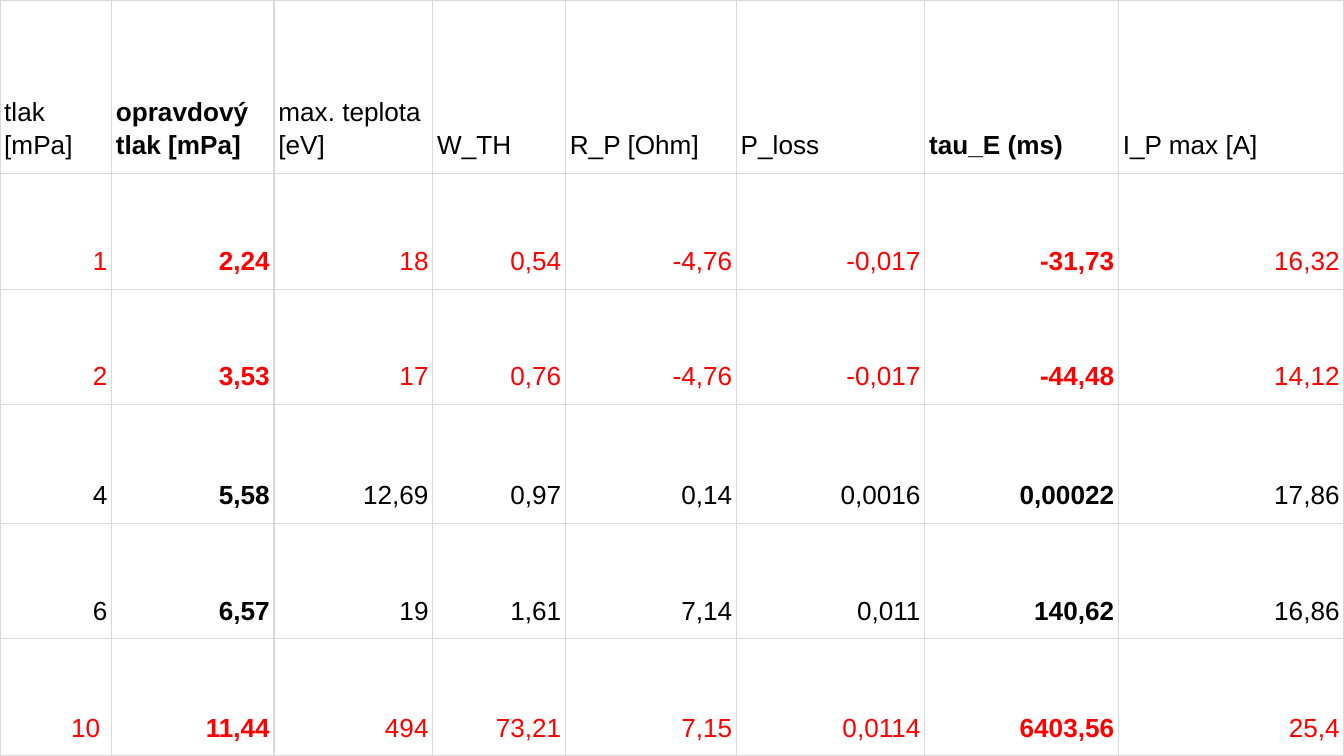
from dataclasses import dataclass

from lxml import etree
from pptx import Presentation
from pptx.dml.color import RGBColor
from pptx.enum import text
from pptx.oxml import ns
from pptx.util import Cm, Pt


@dataclass(frozen=True)
class Theme:
    ink: str = "000000"
    alert: str = "FF0000"
    paper: str = "FFFFFF"
    rule: str = "D9D9D9"
    font: str = "Arial"
    size: float = 14
    line: float = 0.75
    lead: float = 1.15


THEME = Theme()
WIDTHS = [2.11, 3.07, 3, 2.51, 3.23, 3.56, 3.66, 4.26]
HEIGHTS = [3.28, 2.18, 2.18, 2.24, 2.18, 2.21]
BOLD = {1, 6}
ALERTS = {1, 2, 5}
ROWS = [
    ["tlak [mPa]", "opravdový tlak [mPa]", "max. teplota [eV]", "W_TH",
     "R_P [Ohm]", "P_loss", "tau_E (ms)", "I_P max [A]"],
    ["1", "2,24", "18", "0,54", "-4,76", "-0,017", "-31,73", "16,32"],
    ["2", "3,53", "17", "0,76", "-4,76", "-0,017", "-44,48", "14,12"],
    ["4", "5,58", "12,69", "0,97", "0,14", "0,0016", "0,00022", "17,86"],
    ["6", "6,57", "19", "1,61", "7,14", "0,011", "140,62", "16,86"],
    ["10 ", "11,44", "494", "73,21", "7,15", "0,0114", "6403,56", "25,4"],
]


def border(cell):
    props = cell._tc.get_or_add_tcPr()
    for side in ("lnL", "lnR", "lnT", "lnB"):
        line = etree.SubElement(props, ns.qn(f"a:{side}"), w=str(Pt(THEME.line)))
        fill = etree.SubElement(line, ns.qn("a:solidFill"))
        etree.SubElement(fill, ns.qn("a:srgbClr"), val=THEME.rule)


def fill_cell(cell, words, color, bold, align):
    border(cell)
    cell.fill.solid()
    cell.fill.fore_color.rgb = RGBColor.from_string(THEME.paper)
    cell.vertical_anchor = text.MSO_ANCHOR.BOTTOM
    cell.margin_left = cell.margin_right = Cm(0.08)
    cell.margin_top = cell.margin_bottom = Cm(0.25)
    cell.text_frame.text = words
    para = cell.text_frame.paragraphs[0]
    para.alignment = align
    para.line_spacing = THEME.lead
    font = para.runs[0].font
    font.name = THEME.font
    font.size = Pt(THEME.size)
    font.bold = bold
    font.color.rgb = RGBColor.from_string(color)


def add_results(slide, left, top, width, height):
    frame = slide.shapes.add_table(len(ROWS), len(WIDTHS), left, top, width, height)
    table = frame.table
    table.first_row = table.horz_banding = False
    for column, share in zip(table.columns, WIDTHS):
        column.width = int(width * share / sum(WIDTHS))
    for row, share in zip(table.rows, HEIGHTS):
        row.height = int(height * share / sum(HEIGHTS))
    for r, values in enumerate(ROWS):
        color = THEME.alert if r in ALERTS else THEME.ink
        align = text.PP_ALIGN.RIGHT if r else text.PP_ALIGN.LEFT
        for c, words in enumerate(values):
            fill_cell(table.cell(r, c), words, color, c in BOLD, align)


def main():
    deck = Presentation()
    deck.slide_width, deck.slide_height = Cm(25.4), Cm(14.29)
    slide = deck.slides.add_slide(deck.slide_layouts[6])
    add_results(slide, Cm(0), Cm(0), deck.slide_width, deck.slide_height)
    deck.save("out.pptx")


if __name__ == "__main__":
    main()
